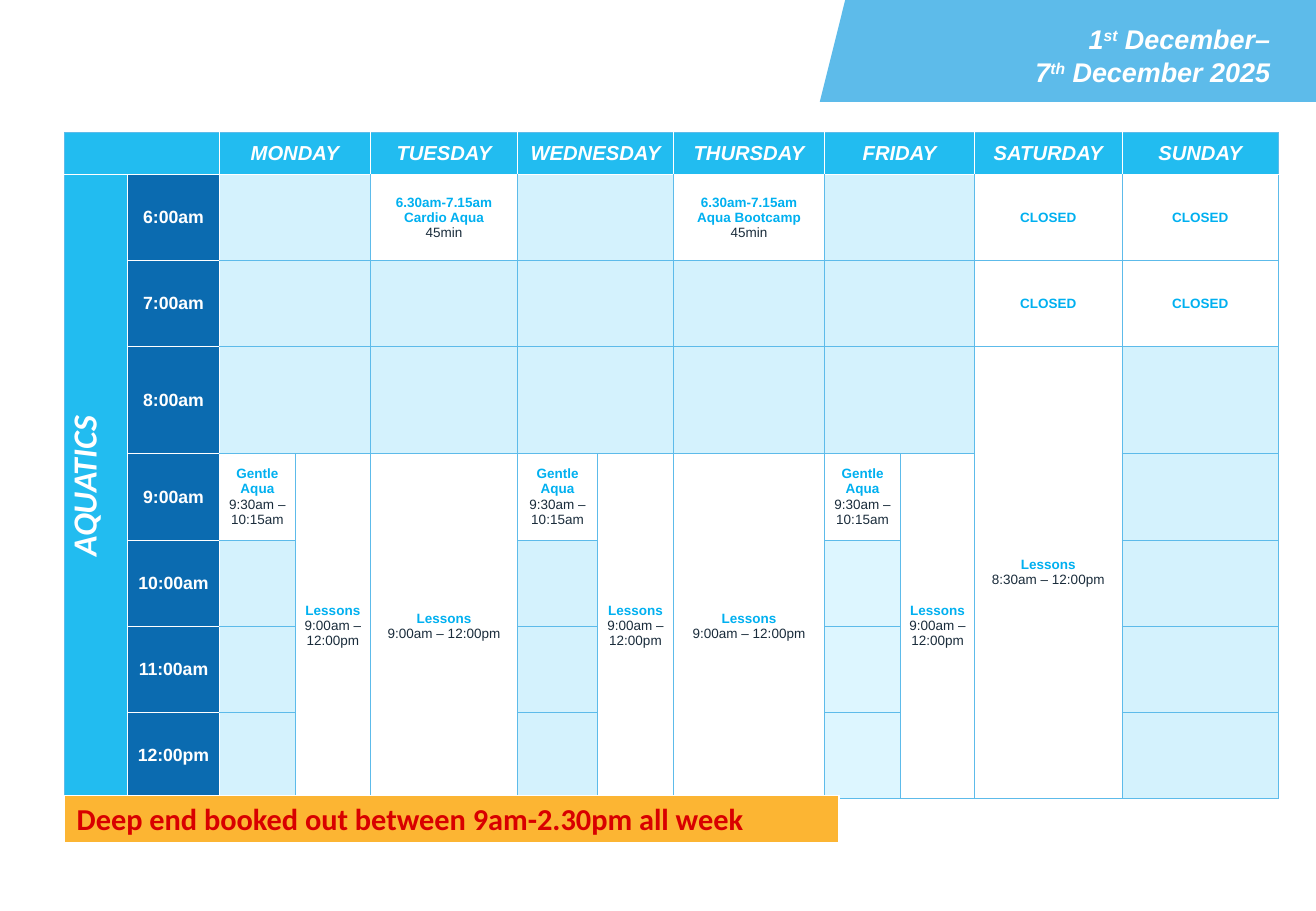
from lxml import etree
from pptx import Presentation
from pptx.dml.color import RGBColor
from pptx.enum.shapes import MSO_SHAPE
from pptx.enum.text import MSO_ANCHOR, PP_ALIGN
from pptx.oxml.ns import qn
from pptx.util import Cm, Pt

MIDDLE = MSO_ANCHOR.MIDDLE
CENTER, RIGHT = PP_ALIGN.CENTER, PP_ALIGN.RIGHT
SLANT, RECT = MSO_SHAPE.PARALLELOGRAM, MSO_SHAPE.RECTANGLE
WHITE, LINE, HEAD, TIME = "FFFFFF", "5DBBEA", "22BCF0", "0B6BB0"
FREE, PALE, TITLE, DARK = "D4F2FD", "DDF6FF", "00B0F0", "1A2C3B"


def paint(fill, tint):
    fill.solid()
    fill.fore_color.rgb = RGBColor.from_string(tint)


def put(para, text, size=8, tint=WHITE, bold=True, italic=False,
        font="Arial", align=CENTER, lift=0):
    para.alignment = align
    run = para.add_run()
    run.text = text
    run.font.size, run.font.name = Pt(size), font
    run.font.bold, run.font.italic = bold, italic
    paint(run.font.fill, tint)
    if lift:
        run.font._element.set("baseline", str(lift * 1000))


deck = Presentation()
deck.slide_width, deck.slide_height = Cm(27.53), Cm(19.05)
slide = deck.slides.add_slide(deck.slide_layouts[6])
shapes = slide.shapes

# Banner
for kind, left, width in ((SLANT, 17.15, 6.4), (RECT, 18.5, 9.03)):
    band = shapes.add_shape(kind, Cm(left), 0, Cm(width), Cm(2.13))
    band.shadow.inherit = False
    paint(band.fill, LINE)
    band.line.fill.background()

# Timetable frame
widths = [1.32, 1.92, 1.59, 1.57, 3.08, 1.67, 1.59, 3.16, 1.59, 1.55, 3.08, 3.28]
heights = [0.88, 1.8, 1.8, 2.24, 1.8, 1.8, 1.8, 1.8]
rows, cols = len(heights), len(widths)
plan = shapes.add_table(rows, cols, Cm(1.35), Cm(2.77),
                        Cm(sum(widths)), Cm(sum(heights))).table
plan.first_row = plan.horz_banding = False
for col, width in zip(plan.columns, widths):
    col.width = Cm(width)
for row, height in zip(plan.rows, heights):
    row.height = Cm(height)

# Merged cells: row, column, rows, columns
spans = [(0, 0, 1, 2), (1, 0, 7, 1), (3, 10, 5, 1)]
spans += [(r, c, 1, 2) for r in range(4) for c in (2, 5, 8)]
spans += [(4, c, 4, 1) for c in (3, 4, 6, 7, 9)]
for r, c, down, over in spans:
    plan.cell(r, c).merge(plan.cell(r + down - 1, c + over - 1))

# Sessions: bold lines, then plain line
swim = ("Lessons", "9:00am – 12:00pm")
gentle = ("Gentle Aqua", "9:30am – 10:15am")
slots = {
    (1, 4): ("6.30am-7.15am", "Cardio Aqua", "45min"),
    (1, 7): ("6.30am-7.15am", "Aqua Bootcamp", "45min"),
    (3, 10): ("Lessons", "8:30am – 12:00pm"),
}
slots.update({(r, c): ("CLOSED",) for r in (1, 2) for c in (10, 11)})
slots.update({(4, c): gentle for c in (2, 5, 8)})
slots.update({(4, c): swim for c in (3, 4, 6, 7, 9)})
days = {2: "MONDAY", 4: "TUESDAY", 5: "WEDNESDAY", 7: "THURSDAY",
        8: "FRIDAY", 10: "SATURDAY", 11: "SUNDAY"}
hours = ["6:00am", "7:00am", "8:00am", "9:00am", "10:00am", "11:00am", "12:00pm"]

# Fill the timetable and note the borders of each cell
jobs = []
for r in range(rows):
    for c in range(cols):
        cell = plan.cell(r, c)
        cell.vertical_anchor = MIDDLE
        cell.margin_left = cell.margin_right = Cm(0.03 if r == 0 else 0.13)
        cell.margin_top = cell.margin_bottom = 0
        if cell.is_spanned:
            continue
        para = cell.text_frame.paragraphs[0]
        tint = PALE if c == 8 and r > 4 else FREE
        if r == 0:
            tint = HEAD
            if c in days:
                put(para, days[c], 12, italic=True)
        elif c == 0:
            tint = HEAD
            put(para, "AQUATICS", 20, italic=True, font="Calibri")
            cell._tc.get_or_add_tcPr().set("vert", "vert270")
        elif c == 1:
            tint = TIME
            put(para, hours[r - 1], 10.5)
        elif (r, c) in slots:
            tint = WHITE
            for n, text in enumerate(slots[r, c]):
                if n:
                    para = cell.text_frame.add_paragraph()
                plain = text[-3:] == "min" or "–" in text
                put(para, text, tint=DARK if plain else TITLE, bold=not plain)
        sides = []
        for side, x in (("L", c), ("R", c + cell.span_width if cell.is_merge_origin else c + 1)):
            white = x in (1, 2) or r == 0 and 0 < x < cols
            thick = 1 if (r, c, side) == (4, 1, "L") else 0.5
            sides.append((side, WHITE if white else LINE, thick))
        for side, y in (("T", r), ("B", r + cell.span_height if cell.is_merge_origin else r + 1)):
            white = y == 1 or c == 1 and 1 < y < rows
            sides.append((side, WHITE if white else LINE, 0.5))
        jobs.append((cell, tint, sides))

# Dates
box = shapes.add_textbox(Cm(16.74), Cm(0.48), Cm(9.83), Cm(1.37))
frame = box.text_frame
frame.word_wrap = True
frame.margin_left = frame.margin_right = frame.margin_top = frame.margin_bottom = 0
para = frame.paragraphs[0]
for day, mark, rest in (("1", "st", " December–"), ("7", "th", " December 2025")):
    if day == "7":
        para.add_line_break()
    for text, lift in ((day, 0), (mark, 30), (rest, 0)):
        put(para, text, 16, italic=True, align=RIGHT, lift=lift)

# Notice
note = shapes.add_table(1, 1, Cm(1.35), Cm(16.64), Cm(16.2), Cm(0.92)).table
note.first_row = note.horz_banding = False
cell = note.cell(0, 0)
put(cell.text_frame.paragraphs[0], "Deep end booked out between 9am-2.30pm all week",
    18, "D80000", font="Calibri", align=PP_ALIGN.LEFT)
jobs.append((cell, "FCB533", [(s, WHITE, 3 if s == "B" else 1) for s in "LRTB"]))

# Borders and fills of both tables
for cell, tint, sides in jobs:
    props = cell._tc.get_or_add_tcPr()
    for side, hue, width in sides:
        edge = etree.SubElement(props, qn("a:ln" + side), w=str(Pt(width)))
        solid = etree.SubElement(edge, qn("a:solidFill"))
        etree.SubElement(solid, qn("a:srgbClr"), val=hue)
    paint(cell.fill, tint)

deck.save("out.pptx")
